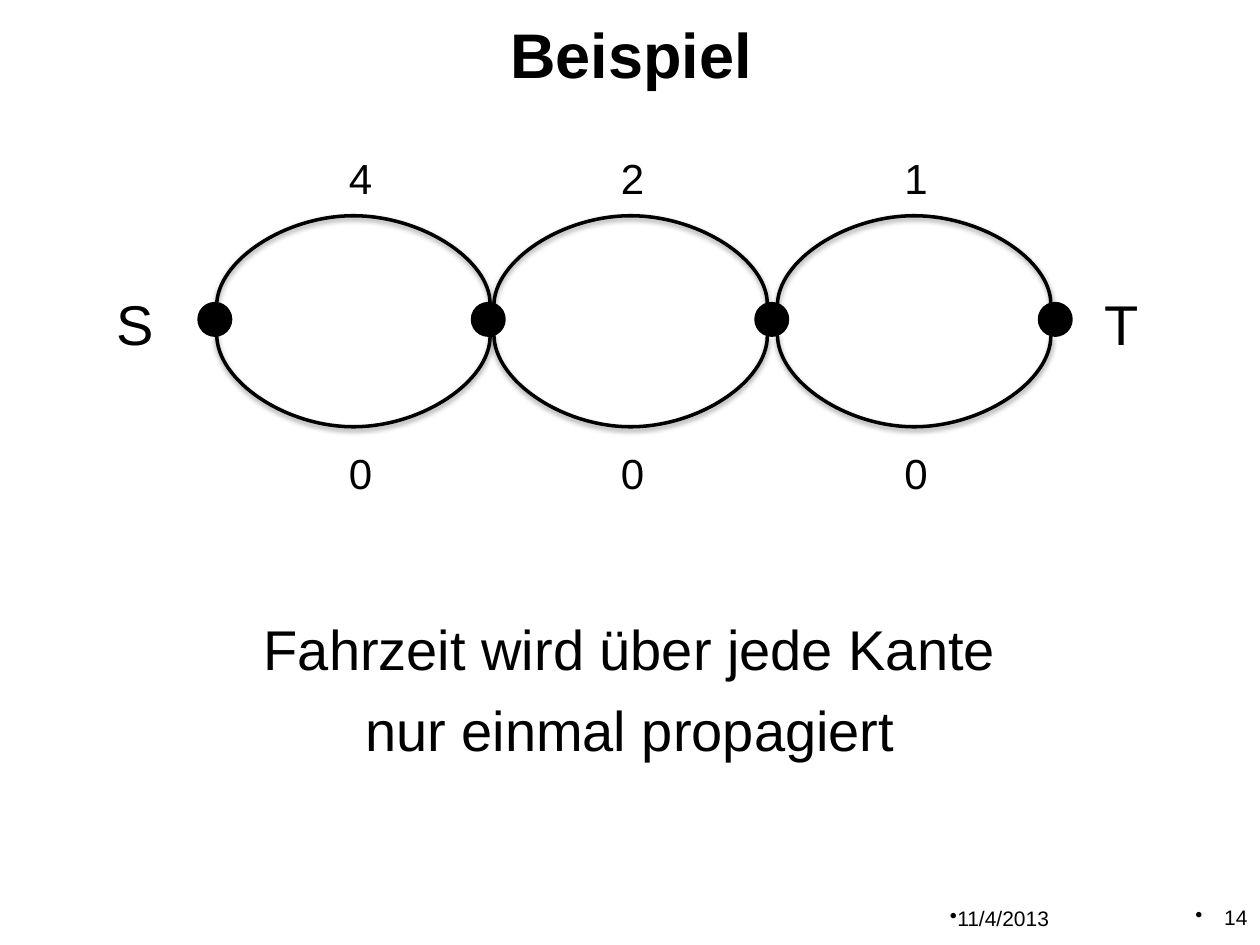
from lxml import etree
from pptx import Presentation
from pptx import util as u
from pptx.dml.color import RGBColor
from pptx.enum import shapes, text
from pptx.oxml import parse_xml
from pptx.oxml.ns import qn

NS = 'xmlns:a="http://schemas.openxmlformats.org/drawingml/2006/main"'
COLORS = {"ink": "000000", "shade": "000000"}
ALIGN = text.PP_ALIGN
INK = RGBColor.from_string(COLORS["ink"])


class Sketch:
    """Holds the slide and the style shared by its elements."""
    font = "Arial"
    line = u.Pt(2)

    def __init__(self, slide):
        self.slide = slide

    def text(self, words, box, size, align=ALIGN.LEFT, bold=False,
             wrap=False, middle=False, hang=None):
        """Add a text box; hang is the bullet's indent, None for no bullet."""
        frame = self.slide.shapes.add_textbox(*map(u.Inches, box)).text_frame
        frame.text = words
        frame.word_wrap = wrap
        if middle:
            frame.vertical_anchor = text.MSO_ANCHOR.MIDDLE
        for i, para in enumerate(frame.paragraphs):
            para.alignment = align
            if i:
                para.space_before = u.Pt(8)
            if hang is not None:
                props = para._p.get_or_add_pPr()
                props.set("marL", str(u.Inches(hang)))
                props.set("indent", str(-u.Inches(hang)))
                etree.SubElement(props, qn("a:buChar")).set("char", "•")
            for run in para.runs:
                run.font.name = self.font
                run.font.size = u.Pt(size)
                run.font.bold = bold
                run.font.color.rgb = INK

    def node(self, x, y, size):
        dot = self.slide.shapes.add_shape(
            shapes.MSO_SHAPE.OVAL, *map(u.Inches, (x, y, size, size)))
        dot.shadow.inherit = False
        dot.fill.solid()
        dot.fill.fore_color.rgb = INK
        dot.line.color.rgb = INK
        dot.line.width = self.line

    def arc(self, x, y, span, rise, up):
        """Bow a curved connector from (x, y) up or down by rise.

        The connector is a thin upright strip turned a quarter, whose
        adjustment pushes the bend far outside the strip.
        """
        thin = u.Pt(1)
        left = u.Inches(x + span / 2) - thin // 2
        top = u.Inches(y - span / 2)
        curve = self.slide.shapes.add_connector(
            shapes.MSO_CONNECTOR.CURVE, left, top,
            left + thin, top + u.Inches(span))
        curve.line.color.rgb = INK
        curve.line.width = self.line
        props = curve._element.spPr
        frame = props.find(qn("a:xfrm"))
        frame.set("rot", str((90 if up else 270) * 60000))
        frame.set("flipH", "1")
        if up:
            frame.set("flipV", "1")
        bend = round(u.Inches(rise) / thin * 100000)
        geom = props.find(qn("a:prstGeom"))
        for old in list(geom):
            geom.remove(old)
        geom.append(parse_xml(
            f'<a:avLst {NS}><a:gd name="adj1" fmla="val {bend}"/></a:avLst>'))
        props.append(parse_xml(
            f'<a:effectLst {NS}><a:outerShdw blurRad="40000" dist="20000" '
            f'dir="5400000" rotWithShape="0"><a:srgbClr val="{COLORS["shade"]}">'
            '<a:alpha val="38000"/></a:srgbClr></a:outerShdw></a:effectLst>'))


def main():
    deck = Presentation()
    deck.slide_width, deck.slide_height = u.Inches(10), u.Inches(7.5)
    art = Sketch(deck.slides.add_slide(deck.slide_layouts[6]))

    art.text("Beispiel", (0.51, 0, 9, 0.84), 36, ALIGN.CENTER,
             bold=True, wrap=True, middle=True)
    art.text("11/4/2013", (7.44, 7.14, 1.57, 0.36), 12, wrap=True, hang=0)
    art.text("14", (8.94, 7.13, 1.06, 0.36), 12, ALIGN.RIGHT,
             wrap=True, hang=0.23)

    for x in (1.58, 3.75, 6, 8.25):
        art.node(x, 2.41, 0.25)

    loops = ((1.72, 2.67, "4"), (3.92, 4.83, "2"), (6.17, 7.08, "1"))
    for x, mid, cost in loops:
        art.arc(x, 2.42, 2.17, 0.72, up=True)
        art.arc(x, 2.66, 2.17, 0.74, up=False)
        art.text(cost, (mid, 1.16, 0.39, 0.5), 24)
        art.text("0", (mid, 3.5, 0.39, 0.5), 24)

    art.text("S", (0.83, 2.25, 0.5, 0.64), 32)
    art.text("T", (8.67, 2.25, 0.47, 0.64), 32)
    art.text("Fahrzeit wird über jede Kante\nnur einmal propagiert",
             (1.97, 4.83, 6.06, 1.29), 32, ALIGN.CENTER)
    deck.save("out.pptx")


if __name__ == "__main__":
    main()
